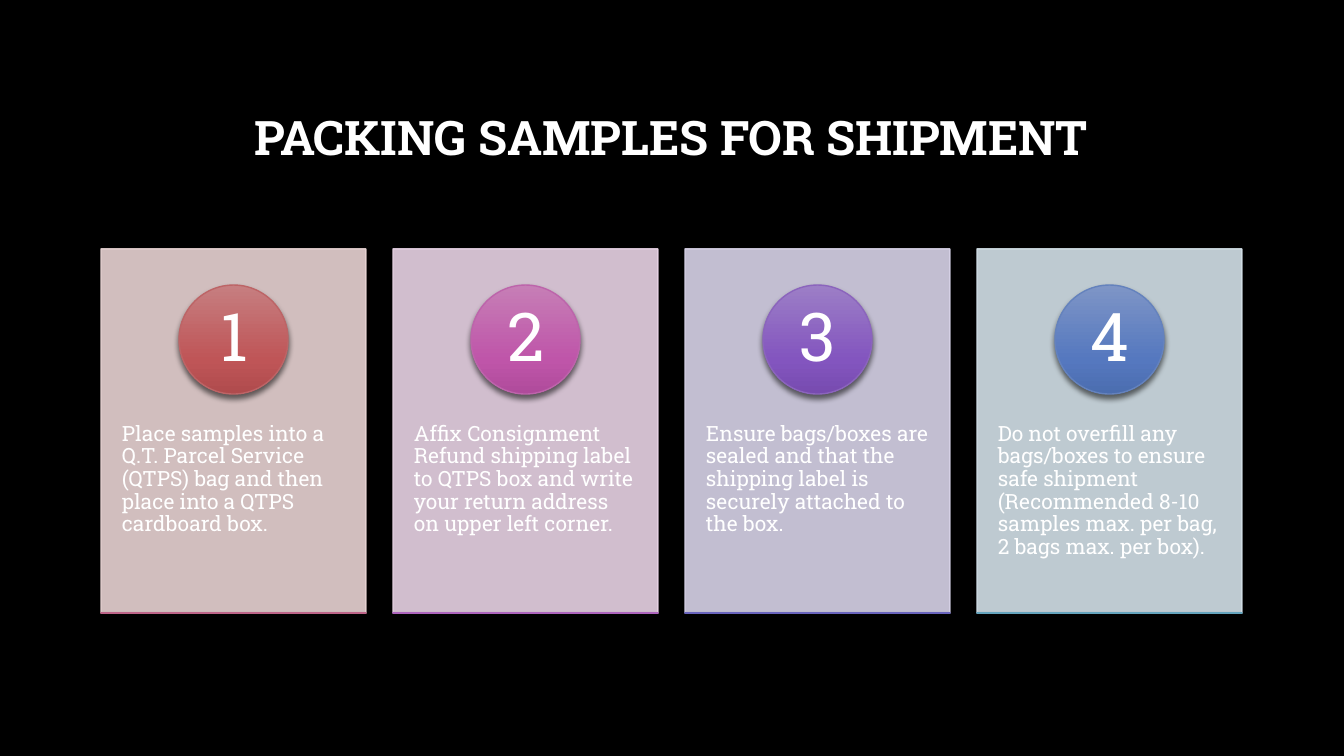
from copy import deepcopy
from lxml.etree import SubElement
from pptx import Presentation
from pptx.dml.color import RGBColor
from pptx.enum.shapes import MSO_SHAPE
from pptx.enum.text import MSO_ANCHOR, PP_ALIGN
from pptx.oxml.ns import qn
from pptx.util import Pt

PX = 914400 / 100.8
BLACK = RGBColor(0x00, 0x00, 0x00)
WHITE = RGBColor(0xFF, 0xFF, 0xFF)
PANELS = [RGBColor.from_string(c) for c in ("E8D3D3", "E8D3E5", "D8D3E8", "D3E0E8")]
DISCS = [[RGBColor.from_string(c) for c in row.split()] for row in (
    "C67E80 BF5557 AF4B4D BD6466",
    "C67EB6 BF55A9 AF4B9B BD64AB",
    "9C7EC6 8355BF 774BAF 8B64BD",
    "7E95C6 5578BF 4B6DAF 6482BD",
)]
BARS = [[RGBColor.from_string(c) for c in row.split()] for row in (
    "C67E9A BF5580 AF4B74 BD6488",
    "B87EC6 AC55BF 9E4BAF AD64BD",
    "827EC6 5B55BF 504BAF 6964BD",
    "7EB1C6 55A1BF 4B93AF 64A4BD",
)]
STEPS = [
    "Place samples into a Q.T. Parcel Service (QTPS) bag and then place into a QTPS cardboard box.",
    "Affix Consignment Refund shipping label to QTPS box and write your return address on upper left corner.",
    "Ensure bags/boxes are sealed and that the shipping label is securely attached to the box.",
    "Do not overfill any bags/boxes to ensure safe shipment (Recommended 8-10 samples max. per bag, 2 bags max. per box).",
]

deck = Presentation()
deck.slide_width, deck.slide_height = round(1344 * PX), round(756 * PX)
slide = deck.slides.add_slide(deck.slide_layouts[6])
slide.background.fill.solid()
slide.background.fill.fore_color.rgb = BLACK


def add_text(text, spot, size, inset, align, anchor, bold=False):
    box = slide.shapes.add_textbox(*[round(n * PX) for n in spot])
    frame = box.text_frame
    frame.word_wrap = True
    frame.vertical_anchor = anchor
    frame.margin_left = frame.margin_right = round(inset[0] * PX)
    frame.margin_top = frame.margin_bottom = round(inset[1] * PX)
    para = frame.paragraphs[0]
    para.alignment = align
    para.line_spacing = 0.9
    run = para.add_run()
    run.text = text
    run.font.name = "Roboto Slab"
    run.font.size = Pt(size)
    run.font.bold = bold
    run.font.color.rgb = WHITE


def add_glossy(kind, spot, tones):
    shape = slide.shapes.add_shape(kind, *[round(n * PX) for n in spot])
    shape.fill.gradient()
    shape.fill.gradient_angle = 270
    stops = shape._element.spPr.find(qn("a:gradFill")).find(qn("a:gsLst"))
    stops.append(deepcopy(stops[-1]))
    for stop, place, tone in zip(shape.fill.gradient_stops, (0, 0.69, 1), tones):
        stop.position = place
        stop.color.rgb = tone
    shape.line.color.rgb = tones[3]
    shape.line.width = Pt(1)
    shape.shadow.inherit = False
    effects = shape._element.spPr.find(qn("a:effectLst"))
    shade = SubElement(effects, qn("a:outerShdw"), blurRad=str(Pt(4)),
                       dist=str(Pt(3)), dir="5400000", algn="ctr", rotWithShape="0")
    color = SubElement(shade, qn("a:srgbClr"), val=str(BLACK))
    SubElement(color, qn("a:alpha"), val="54000")


add_text("PACKING SAMPLES FOR SHIPMENT", (101, 67, 1141, 146), 34, (10, 5),
         PP_ALIGN.CENTER, MSO_ANCHOR.MIDDLE, True)

for i, step in enumerate(STEPS):
    left = 101 + 292 * i
    panel = slide.shapes.add_shape(
        MSO_SHAPE.RECTANGLE, *[round(n * PX) for n in (left, 249, 265, 364)])
    panel.shadow.inherit = False
    panel.fill.solid()
    panel.line.width = Pt(1)
    for paint in (panel.fill.fore_color, panel.line.color):
        paint.rgb = PANELS[i]
    for color in panel._element.spPr.iter(qn("a:srgbClr")):
        SubElement(color, qn("a:alpha"), val="90000")
    add_text(step, (left, 387, 265, 219), 15, (21, 36), PP_ALIGN.LEFT, MSO_ANCHOR.TOP)
    add_glossy(MSO_SHAPE.OVAL, (left + 78, 285, 109, 109), DISCS[i])
    add_text(str(i + 1), (left + 94, 301, 78, 78), 48, (8, 1),
             PP_ALIGN.CENTER, MSO_ANCHOR.MIDDLE)
    add_glossy(MSO_SHAPE.RECTANGLE, (left, 613, 265, 0), BARS[i])

deck.save("out.pptx")
